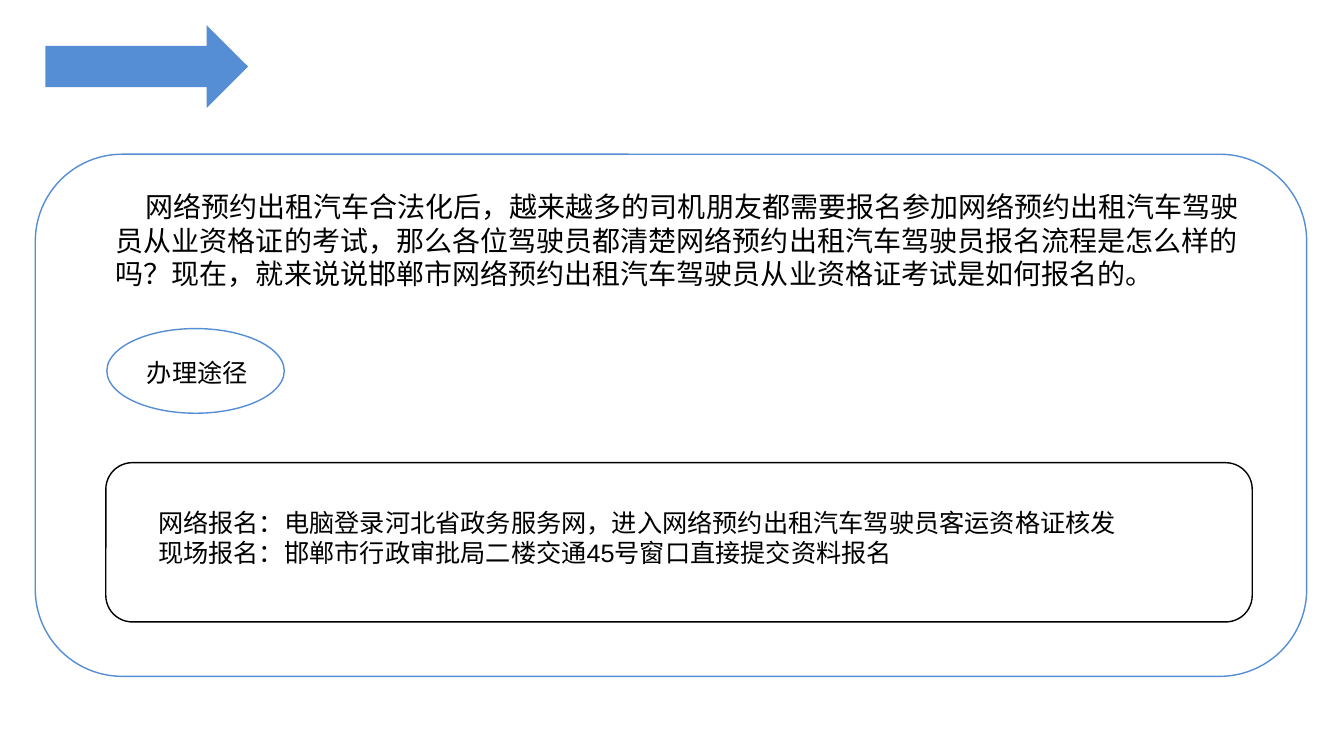
"""Build the slide on how to register for the ride-hailing driver exam."""
from pptx import Presentation
from pptx.dml.color import RGBColor
from pptx.enum.shapes import MSO_SHAPE as SHAPE
from pptx.enum.text import MSO_ANCHOR as ANCHOR, PP_ALIGN as ALIGN
from pptx.util import Pt

BLUE = RGBColor(0x55, 0x8E, 0xD5)
BLACK = RGBColor(0, 0, 0)
WHITE = RGBColor(255, 255, 255)

INTRO = ["网络预约出租汽车合法化后，越来越多的司机朋友都需要报名参加网络预约出租汽车驾驶员从业资格证的考试，那么各位驾驶员都清楚网络预约出租汽车驾驶员报名流程是怎么样的吗？现在，就来说说邯郸市网络预约出租汽车驾驶员从业资格证考试是如何报名的。"]
HEADING = ["办理途径"]
CHANNELS = [
    "网络报名：电脑登录河北省政务服务网，进入网络预约出租汽车驾驶员客运资格证核发",
    "现场报名：邯郸市行政审批局二楼交通45号窗口直接提交资料报名",
]

EMU_PER_PX = 9144
SLIDE_SIZE = (1333, 750)
INSET_X, INSET_Y = 10, 5
INTRO_INDENT = 29

PARTS = [
    {"kind": SHAPE.RIGHT_ARROW, "at": (45, 25, 201, 82), "fill": BLUE},
    {"kind": SHAPE.ROUNDED_RECTANGLE, "at": (35, 153, 1261, 518), "line": BLUE},
    {"at": (105, 183, 1137, 209), "lines": INTRO, "size": 20, "indent": INTRO_INDENT},
    {"kind": SHAPE.OVAL, "at": (106, 326, 176, 84), "fill": WHITE, "line": BLUE},
    {"at": (136, 350, 127, 25), "lines": HEADING, "size": 18},
    {"kind": SHAPE.ROUNDED_RECTANGLE, "at": (105, 459, 1137, 158), "line": BLACK},
    {"at": (147, 498, 1071, 99), "lines": CHANNELS, "size": 18},
]


def px(length):
    return length * EMU_PER_PX


def set_all(target, values):
    for name, value in values.items():
        setattr(target, name, value)


def paint(fill, color):
    if color is None:
        fill.background()
    else:
        fill.solid()
        fill.fore_color.rgb = color


def add_outline(slide, kind, at, fill=None, line=None):
    outline = slide.shapes.add_shape(kind, *map(px, at))
    outline.shadow.inherit = False
    paint(outline.fill, fill)
    paint(outline.line.fill, line)
    if line is not None:
        outline.line.width = Pt(1)


def add_text(slide, at, lines, size, indent=0):
    box = slide.shapes.add_textbox(*map(px, at))
    paint(box.fill, WHITE)
    frame = box.text_frame
    set_all(frame, {
        "word_wrap": True, "vertical_anchor": ANCHOR.TOP,
        "margin_left": px(INSET_X), "margin_right": px(INSET_X),
        "margin_top": px(INSET_Y), "margin_bottom": px(INSET_Y),
    })
    frame.text = "\n".join(lines)
    for paragraph in frame.paragraphs:
        paragraph.alignment = ALIGN.LEFT
        if indent:
            properties = paragraph._p.get_or_add_pPr()
            properties.set("marL", "0")
            properties.set("indent", str(px(indent)))
        for run in paragraph.runs:
            set_all(run.font, {"name": "Arial", "size": Pt(size)})
            run.font.color.rgb = BLACK


def main():
    deck = Presentation()
    deck.slide_width, deck.slide_height = map(px, SLIDE_SIZE)
    slide = deck.slides.add_slide(deck.slide_layouts[6])
    for part in PARTS:
        add = add_text if "lines" in part else add_outline
        add(slide, **part)
    deck.save("out.pptx")


if __name__ == "__main__":
    main()
